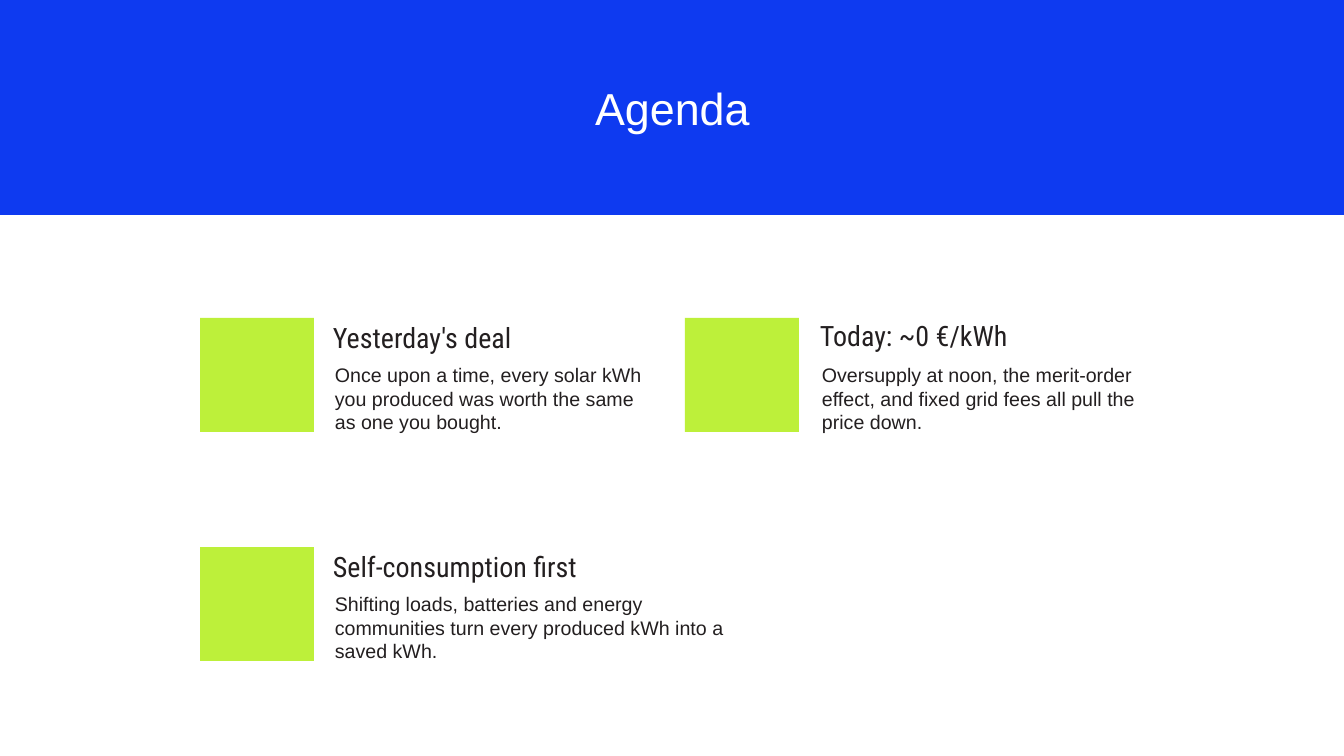
from pptx import Presentation
from pptx import util as u
from pptx.dml.color import RGBColor
from pptx.enum import shapes, text

PX = 914400 / 100.8  # EMU in one px

BLUE = RGBColor(0x0E, 0x3A, 0xF0)
LIME = RGBColor(0xBD, 0xF0, 0x3A)
INK = RGBColor(0x23, 0x1F, 0x20)
WHITE = RGBColor(0xFF, 0xFF, 0xFF)

SQUARE = 114
LEFT, RIGHT = 200, 685
TOP, BOTTOM = 318, 547

# Square left and top, heading left and top, body width, heading, body
TOPICS = [
    (LEFT, TOP, 323, 316, 332, "Yesterday's deal",
     "Once upon a time, every solar kWh you produced was worth the same "
     "as one you bought."),
    (RIGHT, TOP, 810, 314, 360, "Today: ~0 €/kWh",
     "Oversupply at noon, the merit-order effect, and fixed grid fees all "
     "pull the price down."),
    (LEFT, BOTTOM, 323, 545, 414, "Self-consumption first",
     "Shifting loads, batteries and energy communities turn every produced "
     "kWh into a saved kWh."),
]


def px(*lengths):
    return [u.Emu(round(length * PX)) for length in lengths]


def add_block(page, left, top, width, height, color):
    block = page.shapes.add_shape(
        shapes.MSO_SHAPE.RECTANGLE, *px(left, top, width, height))
    block.shadow.inherit = False
    block.fill.solid()
    block.fill.fore_color.rgb = color
    block.line.fill.background()
    return block


def write(box, words, size, font_name, color):
    frame = box.text_frame
    frame.word_wrap = True
    frame.text = words
    para = frame.paragraphs[0]
    para.font.size = u.Pt(size)
    para.font.name = font_name
    para.font.color.rgb = color
    return para


def add_text(page, left, top, width, height, words, size, font_name):
    box = page.shapes.add_textbox(*px(left, top, width, height))
    write(box, words, size, font_name, INK)


def add_header(page, words):
    # The band goes behind the title
    band = add_block(page, 0, 0, 1344, 215, BLUE)
    title = page.shapes.title
    title._element.addprevious(band._element)

    title.left, title.top, title.width, title.height = px(337, 76, 671, 64)
    para = write(title, words, 32, "Arial", WHITE)
    para.alignment = text.PP_ALIGN.CENTER
    title.text_frame.auto_size = text.MSO_AUTO_SIZE.NONE
    title.text_frame.vertical_anchor = text.MSO_ANCHOR.MIDDLE


def add_topic(page, left, top, text_left, text_top, body_width, heading, body):
    add_block(page, left, top, SQUARE, SQUARE, LIME)
    add_text(page, text_left, text_top, 334, 44, heading, 20, "Roboto Condensed")
    add_text(page, text_left + 2, top + 40, body_width, 82, body, 14, "Arial")


def main():
    deck = Presentation()
    deck.slide_width, deck.slide_height = px(1344, 756)
    page = deck.slides.add_slide(deck.slide_layouts[5])  # Title Only

    add_header(page, "Agenda")
    for topic in TOPICS:
        add_topic(page, *topic)

    deck.save("out.pptx")


if __name__ == "__main__":
    main()
